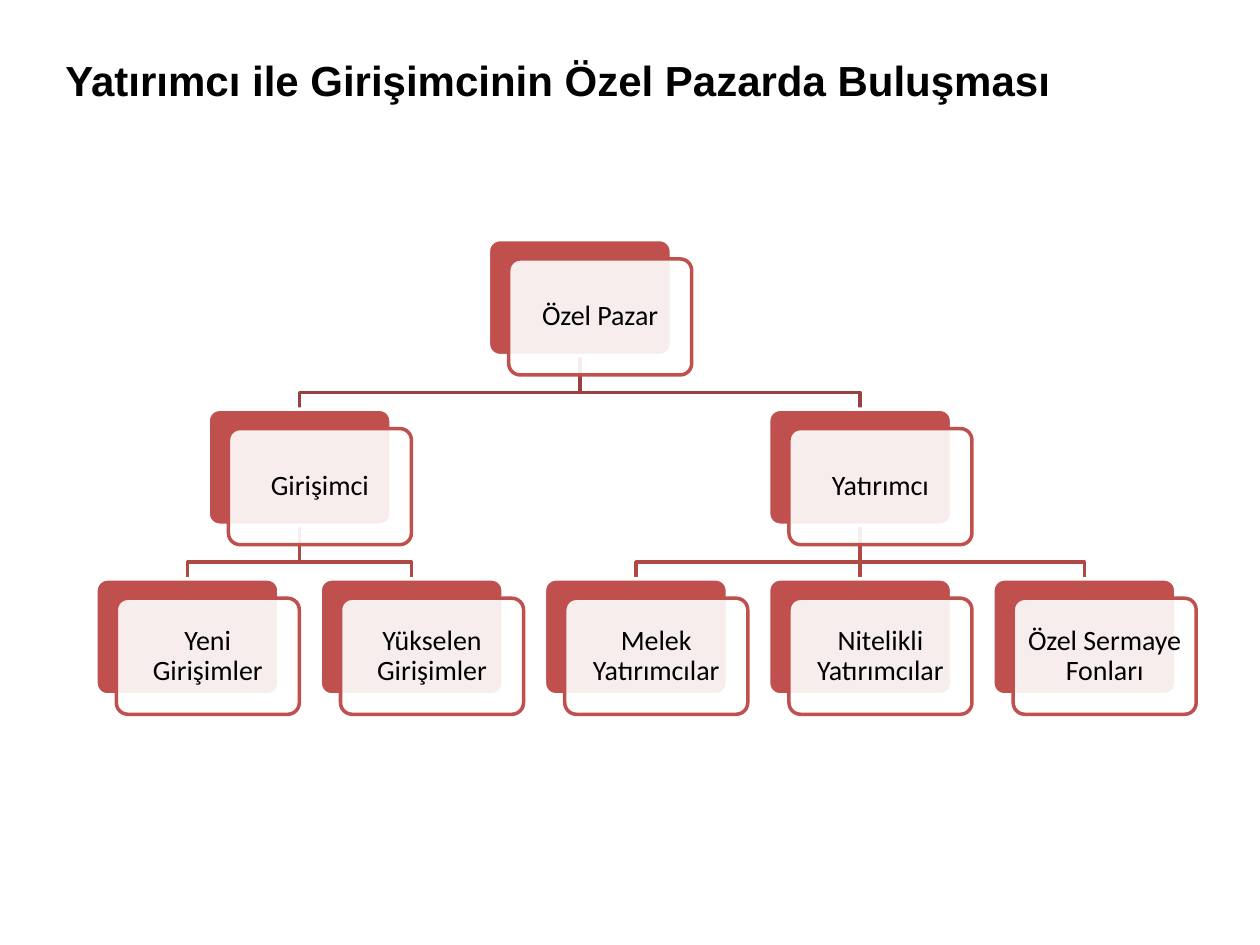
"""Build a one-slide tree of investors and founders in the private market."""
import pptx
import pptx.util
import pptx.dml.color
import pptx.enum.shapes
import pptx.enum.text
import pptx.oxml
import pptx.oxml.ns
from lxml import etree

Cm = pptx.util.Cm
Pt = pptx.util.Pt
RGBColor = pptx.dml.color.RGBColor
SHAPE = pptx.enum.shapes.MSO_SHAPE
LINK = pptx.enum.shapes.MSO_CONNECTOR
ALIGN = pptx.enum.text.PP_ALIGN
ANCHOR = pptx.enum.text.MSO_ANCHOR
qn = pptx.oxml.ns.qn

TITLE = "Yatırımcı ile Girişimcinin Özel Pazarda Buluşması"
TREE = ("Özel Pazar", [
    ("Girişimci", [
        ("Yeni Girişimler", []),
        ("Yükselen Girişimler", []),
    ]),
    ("Yatırımcı", [
        ("Melek Yatırımcılar", []),
        ("Nitelikli Yatırımcılar", []),
        ("Özel Sermaye Fonları", []),
    ]),
])

BLACK = RGBColor(0, 0, 0)
WHITE = RGBColor(255, 255, 255)
RED = RGBColor(0xC0, 0x50, 0x4D)
LINES = [RGBColor(0x9A, 0x40, 0x3E), RGBColor(0xAE, 0x49, 0x46)]

LEFT, TOP = 3.78, 4.83
STEP, DROP = 4.52, 3.42
WIDE, HIGH = 3.69, 2.34
RIGHT, DOWN = 0.41, 0.39
BEND = 0.34


def place(node, level, nodes, links, leaves):
    name, kids = node
    spots = [place(kid, level + 1, nodes, links, leaves) for kid in kids]
    if kids:
        mid = (spots[0] + spots[-1]) / 2
    else:
        mid = LEFT + len(leaves) * STEP
        leaves.append(name)
    nodes.append((level, mid, name))
    links.extend((level, mid, spot) for spot in spots)
    return mid


def style(text, size, font, bold=False):
    run = text.runs[0].font
    run.size, run.name, run.bold = Pt(size), font, bold
    run.color.rgb = BLACK


def join(slide, level, start, end):
    top = TOP + level * DROP + HIGH
    foot = TOP + (level + 1) * DROP
    if start == end:
        line = slide.shapes.add_connector(
            LINK.STRAIGHT, Cm(start), Cm(top), Cm(end), Cm(foot))
        etree.SubElement(line._element.spPr, qn("a:effectLst"))
    else:
        turn = foot - BEND
        pen = slide.shapes.build_freeform(Cm(start), Cm(top))
        pen.add_line_segments(
            [(Cm(x), Cm(y)) for x, y in
             [(start, turn), (end, turn), (end, foot)]], close=False)
        line = pen.convert_to_shape()
        line.fill.background()
        line.shadow.inherit = False
    line.line.color.rgb = LINES[level]
    line.line.width = Pt(2)


def card(slide, x, y, fill, edge):
    box = slide.shapes.add_shape(
        SHAPE.ROUNDED_RECTANGLE, Cm(x), Cm(y), Cm(WIDE), Cm(HIGH))
    box.adjustments[0] = 0.1
    box.shadow.inherit = False
    box.fill.solid()
    box.fill.fore_color.rgb = fill
    box.line.color.rgb = edge
    box.line.width = Pt(2)
    return box


def draw(slide, level, mid, name):
    x, y = mid - WIDE / 2, TOP + level * DROP
    card(slide, x, y, RED, WHITE)
    front = card(slide, x + RIGHT, y + DOWN, WHITE, RED)
    tint = front._element.spPr.find(qn("a:solidFill"))[0]
    etree.SubElement(tint, qn("a:alpha"), val="90000")
    frame = front.text_frame
    frame.word_wrap = True
    frame.vertical_anchor = ANCHOR.MIDDLE
    frame.margin_left = frame.margin_right = Cm(0.17)
    frame.margin_top = frame.margin_bottom = Cm(0.17)
    frame.text = name
    text = frame.paragraphs[0]
    text.alignment = ALIGN.CENTER
    text.line_spacing = 0.9
    style(text, 16, "Calibri")


def main():
    deck = pptx.Presentation()
    deck.slide_width, deck.slide_height = Cm(25.4), Cm(19.05)
    slide = deck.slides.add_slide(deck.slide_layouts[6])
    head = slide.shapes.add_textbox(Cm(1.07), Cm(0.97), Cm(21.77), Cm(1.28))
    head.text_frame.word_wrap = True
    head.text_frame.text = TITLE
    style(head.text_frame.paragraphs[0], 24, "Arial", True)
    nodes, links = [], []
    place(TREE, 0, nodes, links, [])
    for link in links:
        join(slide, *link)
    for node in nodes:
        draw(slide, *node)
    deck.save("out.pptx")


if __name__ == "__main__":
    main()
